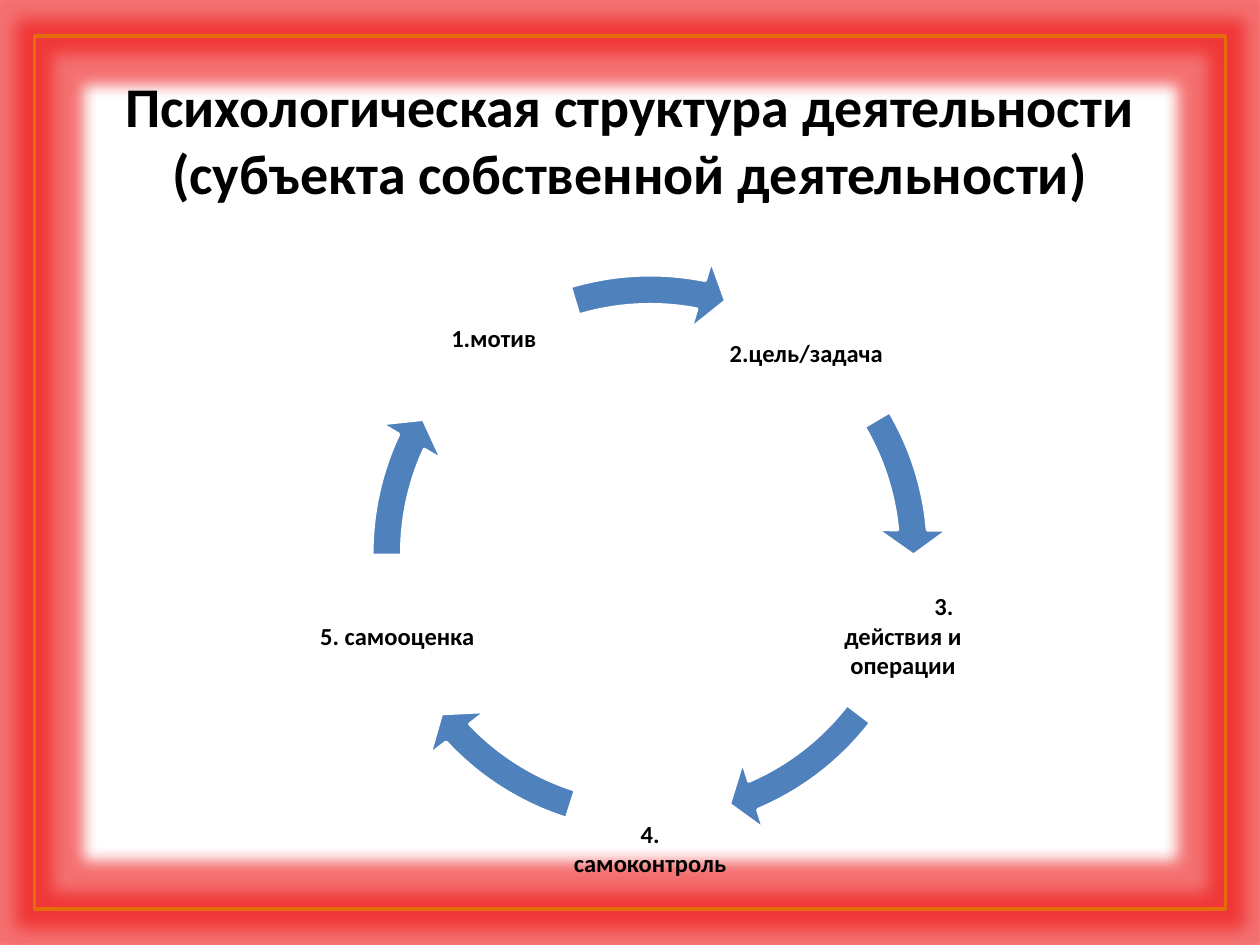
from math import cos, radians, sin

from lxml.etree import SubElement
from pptx import Presentation
from pptx.dml.color import RGBColor
from pptx.enum.shapes import MSO_SHAPE
from pptx.enum.text import MSO_ANCHOR, PP_ALIGN
from pptx.oxml.ns import qn
from pptx.util import Inches, Pt

# Content: label, downward shift and first-line indent (inches)
TITLE = "Психологическая структура деятельности (субъекта собственной деятельности)"
STEPS = [
    ("2.цель/задача", 0.12, 0),
    ("3. действия и операции", 0, 0.65),
    ("4. самоконтроль", 0.23, 0),
    ("5. самооценка", 0, 0),
    ("1.мотив", 0, 0),
]
# Start and end angle of the arrow after each step (degrees)
ARCS = [(329.43, 354.9), (37.54, 66.93), (107.48, 136.86),
        (179.5, 204.98), (253.3, 281.11)]

THEME = {
    "font": "Calibri", "title": 32, "label": 14,
    "text": RGBColor(0, 0, 0), "arrow": RGBColor(0x4F, 0x81, 0xBD),
    "edge": RGBColor(0xFF, 0xFF, 0xFF), "frame": RGBColor(0xE4, 0x6C, 0x0A),
    "glow": "EE1111",
}

# Ring layout (inches)
MID_X, MID_Y = 5.16, 4.39
RING, RADIUS, BOX = 4.75, 2.11, 1.27
FIRST, TURN = -54, 360 / len(STEPS)

deck = Presentation()
deck.slide_width, deck.slide_height = Inches(10), Inches(7.5)
slide = deck.slides.add_slide(deck.slide_layouts[6])


def area(x, y, w, h):
    """Box given by its centre and size."""
    return [Inches(v) for v in (x - w / 2, y - h / 2, w, h)]


def add_text(text, box, size, inset, indent=0):
    frame = slide.shapes.add_textbox(*box).text_frame
    frame.word_wrap = True
    frame.vertical_anchor = MSO_ANCHOR.MIDDLE
    frame.margin_left = frame.margin_right = Inches(inset)
    frame.margin_top = frame.margin_bottom = Inches(min(inset, 0.05))
    para = frame.paragraphs[0]
    para.text = text
    para.alignment = PP_ALIGN.CENTER
    if indent:
        para._p.get_or_add_pPr().set("indent", str(Inches(indent)))
    font = para.font
    font.name, font.size, font.bold = THEME["font"], Pt(size), True
    font.color.rgb = THEME["text"]


def add_shape(kind, box, fill, line):
    shape = slide.shapes.add_shape(kind, *box)
    shape.shadow.inherit = False
    if fill is None:
        shape.fill.background()
    else:
        shape.fill.solid()
        shape.fill.fore_color.rgb = fill
    shape.line.color.rgb = line
    shape.line.width = Pt(2)
    return shape


# Glowing frame
border = add_shape(MSO_SHAPE.RECTANGLE, area(5, 3.75, 9.45, 6.93),
                   None, THEME["frame"])
effects = border._element.spPr.find(qn("a:effectLst"))
glow = SubElement(effects, qn("a:glow"), rad=str(Pt(18)))
tint = SubElement(glow, qn("a:srgbClr"), val=THEME["glow"])
SubElement(tint, qn("a:alpha"), val="60000")

# Title
add_text(TITLE, area(5, 1.1, 8.5, 1.85), THEME["title"], 0.1)

# Cycle of steps and arrows
for i, ((text, drop, indent), (start, end)) in enumerate(zip(STEPS, ARCS)):
    angle = radians(FIRST + i * TURN)
    x = MID_X + RADIUS * cos(angle)
    y = MID_Y + RADIUS * sin(angle) + drop
    add_text(text, area(x, y, BOX, BOX), THEME["label"], 0.02, indent)
    arrow = add_shape(MSO_SHAPE.CIRCULAR_ARROW, area(MID_X, MID_Y, RING, RING),
                      THEME["arrow"], THEME["edge"])
    # Angles are stored as 0.6 units per degree
    for k, val in enumerate((0.05, 5.6 * 0.6, end * 0.6, start * 0.6, 0.06)):
        arrow.adjustments[k] = val

deck.save("out.pptx")
